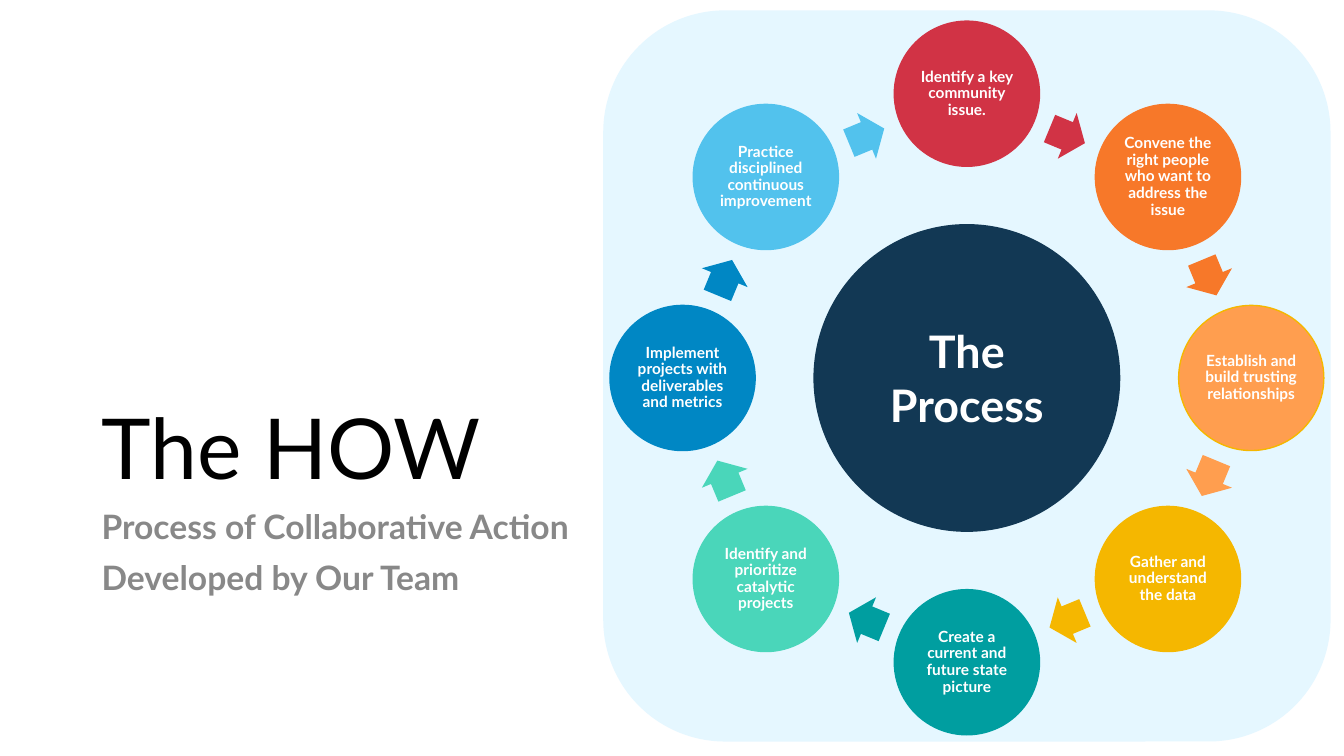
"""Build the slide showing the eight-step collaborative process."""
import math
from dataclasses import dataclass

import pptx
import pptx.util
import pptx.dml.color
import pptx.enum.shapes
import pptx.enum.text

Inches = pptx.util.Inches
Pt = pptx.util.Pt
Shape = pptx.enum.shapes.MSO_SHAPE
Align = pptx.enum.text.PP_ALIGN
Anchor = pptx.enum.text.MSO_ANCHOR


@dataclass(frozen=True)
class Theme:
    """Colours, font and type sizes of the slide."""
    font: str = "Lato"
    black: str = "000000"
    gray: str = "888888"
    white: str = "FFFFFF"
    panel: str = "E5F7FF"
    navy: str = "123854"
    red: str = "D13345"
    orange: str = "F77829"
    peach: str = "FF9E4F"
    gold: str = "F5B700"
    teal: str = "009EA0"
    mint: str = "4AD6BA"
    blue: str = "0087C4"
    sky: str = "52C2ED"
    title: float = 60
    hub: float = 32
    lead: float = 24
    step: float = 11


@dataclass(frozen=True)
class Box:
    """Place and size in inches."""
    left: float
    top: float
    width: float
    height: float


@dataclass(frozen=True)
class Style:
    """Look of a block of text."""
    size: float
    color: str
    bold: bool = True
    align: Align = Align.CENTER
    anchor: Anchor = Anchor.MIDDLE
    space: float = 0.9
    side: float = 0.1
    edge: float = 0.05


@dataclass(frozen=True)
class Step:
    """One stage of the cycle."""
    text: str
    fill: str
    line: str


THEME = Theme()
MID_X, MID_Y = 9.59, 3.75
DISC, RING = 1.44, 2.82
ARROW_W, ARROW_H, ARROW_RING = 0.38, 0.49, 2.6

STEPS = [
    Step("Identify a key community issue.", THEME.red, THEME.red),
    Step("Convene the right people who want to address the issue", THEME.orange, THEME.orange),
    Step("Establish and build trusting relationships", THEME.peach, THEME.gold),
    Step("Gather and understand the data", THEME.gold, THEME.gold),
    Step("Create a current and future state picture", THEME.teal, THEME.teal),
    Step("Identify and prioritize catalytic projects", THEME.mint, THEME.mint),
    Step("Implement projects with deliverables and metrics", THEME.blue, THEME.blue),
    Step("Practice disciplined continuous improvement", THEME.sky, THEME.sky),
]


def paint(code: str) -> pptx.dml.color.RGBColor:
    """Turn a hex code into a colour."""
    return pptx.dml.color.RGBColor.from_string(code)


def orbit(angle: float, ring: float, width: float, height: float) -> Box:
    """Centre a box on a ring, with the angle clockwise from the top."""
    turn = math.radians(angle)
    return Box(MID_X + ring * math.sin(turn) - width / 2,
               MID_Y - ring * math.cos(turn) - height / 2, width, height)


def write(frame, lines: list[str], style: Style, gap: float = 0) -> None:
    """Fill a text frame with one paragraph per line."""
    frame.word_wrap = True
    frame.vertical_anchor = style.anchor
    frame.margin_left = frame.margin_right = Inches(style.side)
    frame.margin_top = frame.margin_bottom = Inches(style.edge)
    for index, line in enumerate(lines):
        para = frame.add_paragraph() if index else frame.paragraphs[0]
        para.alignment = style.align
        para.line_spacing = style.space
        para.space_before = Pt(gap if index else 0)
        run = para.add_run()
        run.text = line
        run.font.name = THEME.font
        run.font.size = Pt(style.size)
        run.font.bold = style.bold
        run.font.color.rgb = paint(style.color)


def label(slide, box: Box, lines: list[str], style: Style, gap: float = 0) -> None:
    """Add a text box."""
    item = slide.shapes.add_textbox(Inches(box.left), Inches(box.top),
                                    Inches(box.width), Inches(box.height))
    write(item.text_frame, lines, style, gap)


def draw(slide, kind: Shape, box: Box, fill: str, line: str | None = None):
    """Add a filled preset shape."""
    item = slide.shapes.add_shape(kind, Inches(box.left), Inches(box.top),
                                  Inches(box.width), Inches(box.height))
    item.shadow.inherit = False
    item.fill.solid()
    item.fill.fore_color.rgb = paint(fill)
    if line:
        item.line.color.rgb = paint(line)
        item.line.width = Pt(1)
    else:
        item.line.fill.background()
    return item


def cycle(slide) -> None:
    """Draw the ring of steps and the arrows between them."""
    style = Style(THEME.step, THEME.white, side=0.02, edge=0.02)
    pitch = 360 / len(STEPS)
    for index, step in enumerate(STEPS):
        angle = index * pitch
        disc = draw(slide, Shape.OVAL, orbit(angle, RING, DISC, DISC), step.fill, step.line)
        write(disc.text_frame, [step.text], style)
        angle += pitch / 2
        arrow = draw(slide, Shape.RIGHT_ARROW,
                     orbit(angle, ARROW_RING, ARROW_W, ARROW_H), step.fill)
        arrow.adjustments[0] = 0.6
        arrow.adjustments[1] = 0.5
        arrow.rotation = angle


def main() -> None:
    """Build and save the deck."""
    deck = pptx.Presentation()
    deck.slide_width, deck.slide_height = Inches(13.33), Inches(7.5)
    slide = deck.slides.add_slide(deck.slide_layouts[6])

    label(slide, Box(0.91, 1.87, 11.5, 3.12), ["The HOW"],
          Style(THEME.title, THEME.black, False, Align.LEFT, Anchor.BOTTOM))
    label(slide, Box(0.91, 5.02, 11.5, 1.64),
          ["Process of Collaborative Action", "Developed by Our Team"],
          Style(THEME.lead, THEME.gray, True, Align.LEFT, Anchor.TOP), gap=10)

    panel = draw(slide, Shape.ROUNDED_RECTANGLE, Box(5.99, 0.11, 7.2, 7.24),
                 THEME.panel, THEME.panel)
    panel.adjustments[0] = 0.167
    cycle(slide)
    hub = draw(slide, Shape.OVAL, orbit(0, 0, 3.03, 3.04), THEME.navy, THEME.navy)
    write(hub.text_frame, ["The Process"], Style(THEME.hub, THEME.white, space=1.0))

    deck.save("out.pptx")


if __name__ == "__main__":
    main()
